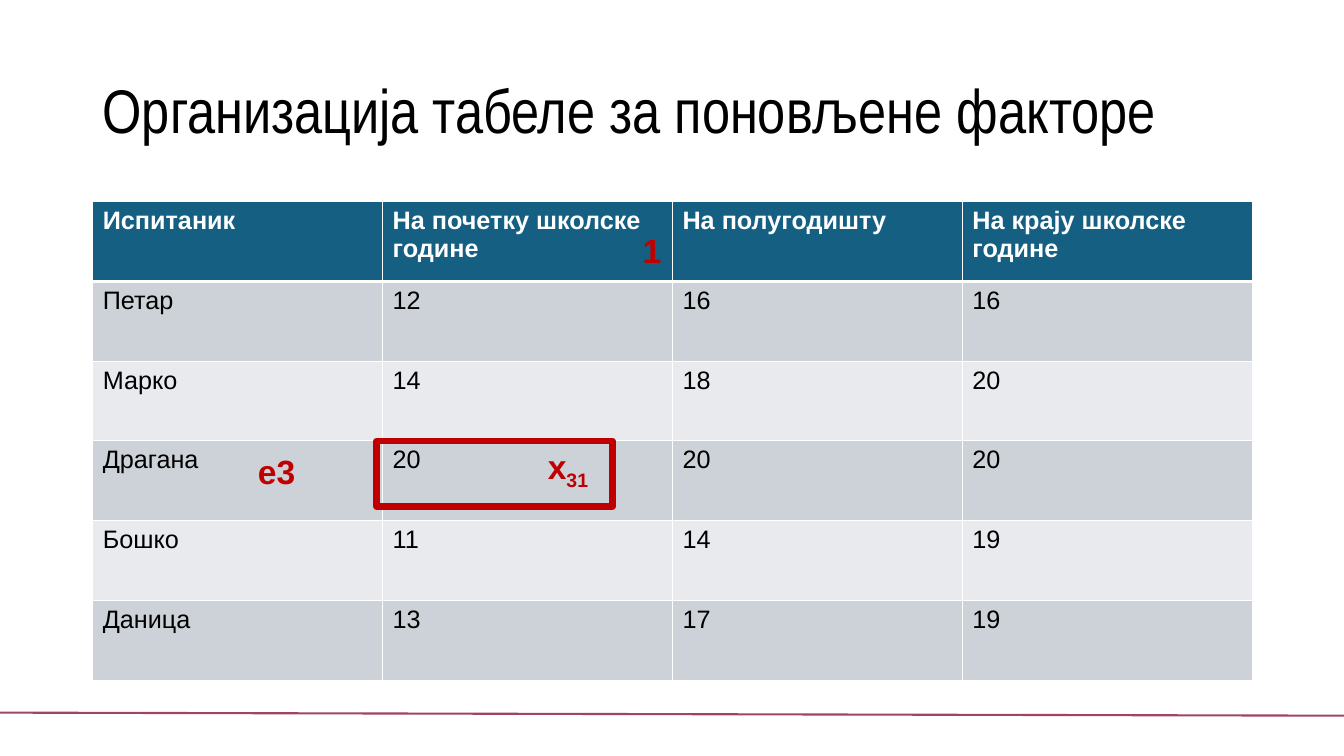
from lxml import etree
from pptx import Presentation
from pptx.dml.color import RGBColor
from pptx.enum.shapes import MSO_CONNECTOR as Connector, MSO_SHAPE as Shape
from pptx.enum.text import MSO_ANCHOR as Anchor
from pptx.oxml.ns import qn
from pptx.util import Inches, Pt

COLORS = {
    "header": "156082",
    "odd": "CCD2D8",
    "even": "E8EAED",
    "white": "FFFFFF",
    "text": "000000",
    "mark": "C00000",
    "rule": "A04561",
}
WIDTH, HEIGHT = 13.33, 7.5
LEFT, CONTENT_WIDTH = 0.92, 11.5
TITLE_BOX = (LEFT, 0.4, CONTENT_WIDTH, 1.45)
TABLE_BOX = (LEFT, 2, CONTENT_WIDTH, 4.75)
SCORES = [
    ("Испитаник", "На почетку школске године", "На полугодишту", "На крају школске године"),
    ("Петар", "12", "16", "16"),
    ("Марко", "14", "18", "20"),
    ("Драгана", "20", "20", "20"),
    ("Бошко", "11", "14", "19"),
    ("Даница", "13", "17", "19"),
]


def color(name):
    return RGBColor.from_string(COLORS[name])


def add_text(para, text, size=18, font="Arial", fill="text", bold=False, baseline=None):
    span = para.add_run()
    span.text = text
    span.font.size = Pt(size)
    span.font.name = font
    span.font.bold = bold
    span.font.color.rgb = color(fill)
    if baseline is not None:
        span.font._element.set("baseline", str(baseline * 1000))


def add_border(cell, side, width):
    line = etree.SubElement(cell._tc.get_or_add_tcPr(), qn(f"a:ln{side}"), w=str(Pt(width)))
    fill = etree.SubElement(line, qn("a:solidFill"))
    etree.SubElement(fill, qn("a:srgbClr"), val=COLORS["white"])


def add_title(page, box):
    title = page.shapes.add_textbox(*map(Inches, box))
    frame = title.text_frame
    frame.word_wrap = True
    frame.vertical_anchor = Anchor.MIDDLE
    para = frame.paragraphs[0]
    para.line_spacing = 0.9
    add_text(para, "Организација табеле за поновљене факторе", size=44, font="Arial Narrow")


def add_scores(page, box):
    rows, columns = len(SCORES), len(SCORES[0])
    table = page.shapes.add_table(rows, columns, *map(Inches, box)).table
    table.horz_banding = False
    for row, values in enumerate(SCORES):
        table.rows[row].height = Inches(box[3] / rows)
        header = row == 0
        fill = "header" if header else ("even", "odd")[row % 2]
        widths = {"L": 1, "R": 1, "T": 3 if row == 1 else 1, "B": 3 if header else 1}
        for column, value in enumerate(values):
            cell = table.cell(row, column)
            for side, width in widths.items():
                add_border(cell, side, width)
            cell.fill.solid()
            cell.fill.fore_color.rgb = color(fill)
            add_text(cell.text_frame.paragraphs[0], value,
                     fill="white" if header else "text", bold=header)


def add_mark(page, left, top, width, text, index=None):
    mark = page.shapes.add_textbox(*map(Inches, (left, top, width, 0.5)))
    mark.text_frame.word_wrap = False
    para = mark.text_frame.paragraphs[0]
    add_text(para, text, size=24, fill="mark", bold=True)
    if index:
        add_text(para, index, size=24, fill="mark", bold=True, baseline=-25)


def add_marks(page, box):
    left, top, width, height = box
    column, row = width / len(SCORES[0]), height / len(SCORES)
    cell_left, cell_top = left + column, top + 3 * row
    frame = page.shapes.add_shape(
        Shape.RECTANGLE, *map(Inches, (cell_left - 0.06, cell_top, 2.34, 0.65)))
    frame.shadow.inherit = False
    frame.fill.background()
    frame.line.color.rgb = color("mark")
    frame.line.width = Pt(4.5)
    add_mark(page, left + 1.54, cell_top + 0.05, 0.58, "е3")
    add_mark(page, cell_left + 2.48, top + 0.23, 0.39, "1")
    add_mark(page, cell_left + 1.54, cell_top, 0.64, "x", index="31")


def add_rule(page):
    ends = (0, 7.07, WIDTH, 7.1)
    rule = page.shapes.add_connector(Connector.STRAIGHT, *map(Inches, ends))
    rule.line.color.rgb = color("rule")
    rule.line.width = Pt(1.5)
    etree.SubElement(rule._element.spPr, qn("a:effectLst"))


def main():
    deck = Presentation()
    deck.slide_width, deck.slide_height = Inches(WIDTH), Inches(HEIGHT)
    page = deck.slides.add_slide(deck.slide_layouts[6])
    add_rule(page)
    add_scores(page, TABLE_BOX)
    add_title(page, TITLE_BOX)
    add_marks(page, TABLE_BOX)
    deck.save("out.pptx")


if __name__ == "__main__":
    main()
